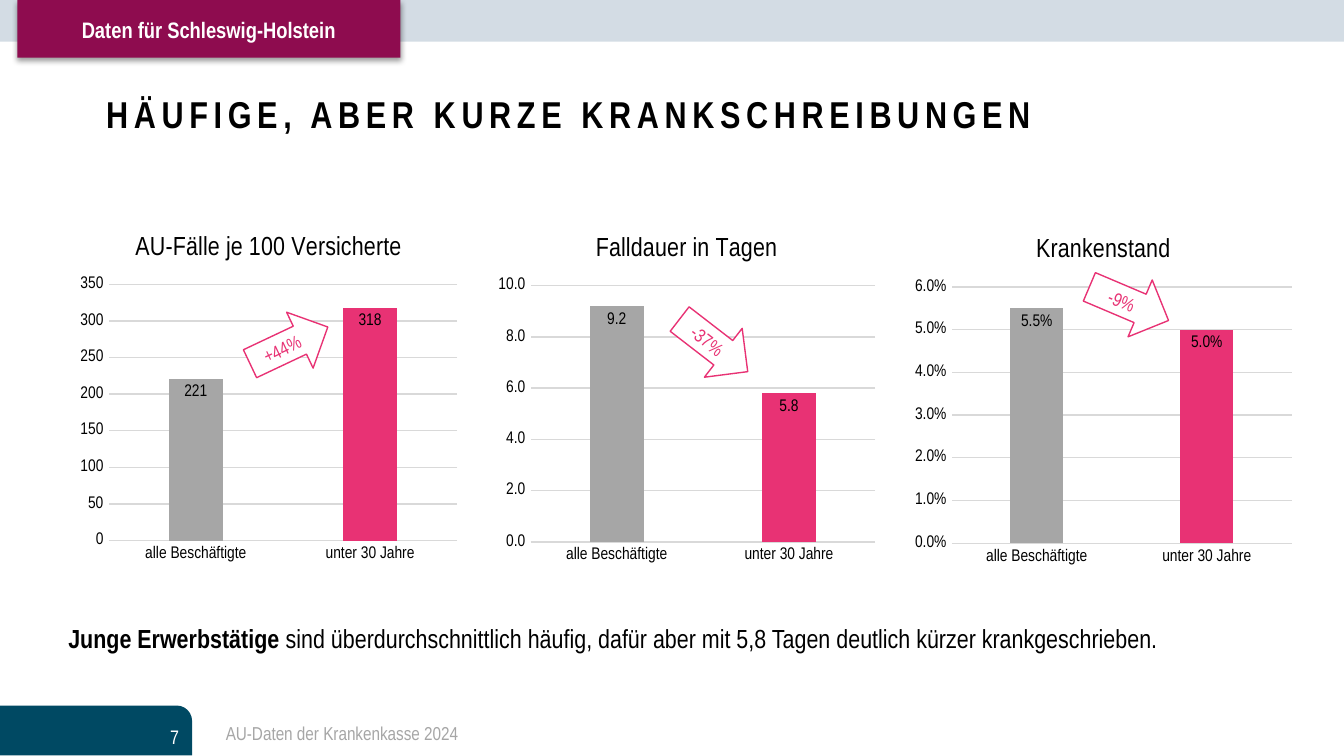
import pptx
import pptx.chart.data
import pptx.dml.color
import pptx.enum.chart
import pptx.enum.shapes
import pptx.enum.text
import pptx.oxml
import pptx.oxml.ns
import pptx.util

Inches, Pt = pptx.util.Inches, pptx.util.Pt
SHAPES = pptx.enum.shapes.MSO_SHAPE
ALIGN = pptx.enum.text.PP_ALIGN
ANCHOR = pptx.enum.text.MSO_ANCHOR
CHART = pptx.enum.chart

COLORS = {
    "black": "000000", "white": "FFFFFF", "band": "D3DCE4", "petrol": "004963",
    "berry": "8E0C4F", "pink": "E83274", "gray": "A6A6A6", "grid": "D9D9D9",
}
FONT = "Arial Narrow"
SHADOW = (
    '<a:effectLst %s><a:outerShdw blurRad="39370" dist="20320" dir="5400000" '
    'rotWithShape="0"><a:srgbClr val="000000"><a:alpha val="38000"/></a:srgbClr>'
    "</a:outerShdw></a:effectLst>" % pptx.oxml.ns.nsdecls("a")
)


def rgb(name):
    return pptx.dml.color.RGBColor.from_string(COLORS[name])


class SlideBuilder:
    def __init__(self, slide):
        self.slide = slide

    def style(self, font, size, color="black", bold=False):
        values = {"name": FONT, "size": Pt(size), "bold": bold}
        for attribute, value in values.items():
            setattr(font, attribute, value)
        font.color.rgb = rgb(color)

    def fill_frame(self, frame, runs, size, color="black", align=ALIGN.LEFT,
                   anchor=ANCHOR.TOP, wrap=True, inset=None):
        layout = {"word_wrap": wrap, "vertical_anchor": anchor,
                  "auto_size": pptx.enum.text.MSO_AUTO_SIZE.NONE}
        if inset is not None:
            for side in ("left", "top", "right", "bottom"):
                layout["margin_" + side] = Inches(inset)
        for attribute, value in layout.items():
            setattr(frame, attribute, value)
        paragraph = frame.paragraphs[0]
        paragraph.alignment = align
        for words, bold in runs:
            run = paragraph.add_run()
            run.text = words
            self.style(run.font, size, color, bold)

    def title(self, words, box, size, spacing):
        heading = self.slide.shapes.title
        for attribute, value in zip(("left", "top", "width", "height"), box):
            setattr(heading, attribute, Inches(value))
        self.fill_frame(heading.text_frame, [(words, True)], size, anchor=ANCHOR.MIDDLE)
        run = heading.text_frame.paragraphs[0].runs[0]
        run.font._element.set("spc", str(spacing * 100))

    def text(self, runs, box, size, **layout):
        textbox = self.slide.shapes.add_textbox(*map(Inches, box))
        self.fill_frame(textbox.text_frame, runs, size, **layout)

    def block(self, kind, box, fill, line=None):
        shape = self.slide.shapes.add_shape(kind, *map(Inches, box))
        shape.shadow.inherit = False
        shape.fill.solid()
        shape.fill.fore_color.rgb = rgb(fill)
        if line:
            shape.line.color.rgb = rgb(line)
            shape.line.width = Pt(0.75)
        else:
            shape.line.fill.background()
        return shape

    def banner(self, box, fill):
        properties = self.block(SHAPES.RECTANGLE, box, fill)._element.spPr
        properties.remove(properties.find(pptx.oxml.ns.qn("a:effectLst")))
        properties.append(pptx.oxml.parse_xml(SHADOW))

    def change_arrow(self, words, left, top, rotation):
        arrow = self.block(SHAPES.RIGHT_ARROW, (left, top, 0.64, 0.46), "white", "pink")
        arrow.rotation = rotation
        self.fill_frame(arrow.text_frame, [(words, False)], 10, "pink", ALIGN.CENTER,
                        ANCHOR.MIDDLE, wrap=False, inset=0)

    def column_chart(self, heading, values, number_format, left, top, major=None):
        data = pptx.chart.data.CategoryChartData(number_format=number_format)
        data.categories = ["alle Beschäftigte", "unter 30 Jahre"]
        data.add_series(heading, values)
        box = map(Inches, (left, top, 2.92, 2.65))
        chart = self.slide.shapes.add_chart(
            CHART.XL_CHART_TYPE.COLUMN_CLUSTERED, *box, data).chart
        self.style(chart.font, 10)
        chart.has_legend = False
        chart.has_title = True
        chart.chart_title.include_in_layout = False
        title_frame = chart.chart_title.text_frame
        title_frame.text = heading
        self.style(title_frame.paragraphs[0].runs[0].font, 14)

        # Axes
        for axis in (chart.category_axis, chart.value_axis):
            axis.major_tick_mark = axis.minor_tick_mark = CHART.XL_TICK_MARK.NONE
            self.style(axis.tick_labels.font, 9)
        value_axis = chart.value_axis
        value_axis.minimum_scale = 0
        if major:
            value_axis.major_unit = major
        value_axis.format.line.fill.background()
        value_axis.has_major_gridlines = True
        for line in (chart.category_axis.format.line,
                     value_axis.major_gridlines.format.line):
            line.color.rgb = rgb("grid")
            line.width = Pt(0.75)

        # Columns and labels
        plot = chart.plots[0]
        plot.gap_width, plot.overlap, plot.vary_by_categories = 219, -27, False
        series = plot.series[0]
        series.format.fill.solid()
        series.format.fill.fore_color.rgb = rgb("pink")
        for index, color in enumerate(("gray", "pink")):
            column = series.points[index].format.fill
            column.solid()
            column.fore_color.rgb = rgb(color)
        labels = series.data_labels
        labels.show_value = True
        labels.position = CHART.XL_LABEL_POSITION.INSIDE_END
        self.style(labels.font, 9)
        for numbers in (value_axis.tick_labels, labels):
            numbers.number_format = number_format
            numbers.number_format_is_linked = False


def main():
    # Widescreen page, 16:9
    presentation = pptx.Presentation()
    presentation.slide_width = Inches(10)
    presentation.slide_height = Inches(10 * 9 / 16)
    page = SlideBuilder(presentation.slides.add_slide(presentation.slide_layouts[5]))

    # Page frame
    page.block(SHAPES.RECTANGLE, (0, 0, 10, 0.31), "band")
    corner = page.block(SHAPES.ROUND_1_RECTANGLE, (0, 5.25, 1.43, 0.37), "petrol")
    corner.adjustments[0] = 0.31
    page.title("HÄUFIGE, ABER KURZE KRANKSCHREIBUNGEN", (0.69, 0.3, 8.62, 1.09), 20, 3)

    # Key message and footer
    page.text([("7", False)], (0.34, 5.33, 1.09, 0.3), 10.5, color="white",
              align=ALIGN.RIGHT, anchor=ANCHOR.MIDDLE)
    page.text([("Junge Erwerbstätige ", True),
               ("sind überdurchschnittlich häufig, dafür aber mit 5,8 Tagen "
                "deutlich kürzer krankgeschrieben.", False)],
              (0.41, 4.58, 8.36, 0.34), 14)
    page.text([("AU-Daten der Krankenkasse 2024", False)], (1.63, 5.32, 7.22, 0.25), 10,
              color="gray", inset=0.05)

    # Region banner
    page.banner((0.13, 0, 2.85, 0.43), "berry")
    page.text([("Daten für Schleswig-Holstein", True)], (0.51, 0.07, 2.35, 0.3), 12,
              color="white")

    # Charts
    page.column_chart("AU-Fälle je 100 Versicherte", (221, 318), "0", 0.54, 1.59)
    page.column_chart("Falldauer in Tagen", (9.2, 5.8), "0.0", 3.65, 1.6, major=2)
    page.column_chart("Krankenstand", (0.055, 0.05), "0.0%", 6.75, 1.61)

    # Changes between the columns
    for change, left, top, rotation in (("-37%", 4.99, 2.34, 37.7),
                                        ("+44%", 1.83, 2.34, 334.7),
                                        ("-9%", 8.08, 2.03, 23)):
        page.change_arrow(change, left, top, rotation)

    presentation.save("out.pptx")


if __name__ == "__main__":
    main()
